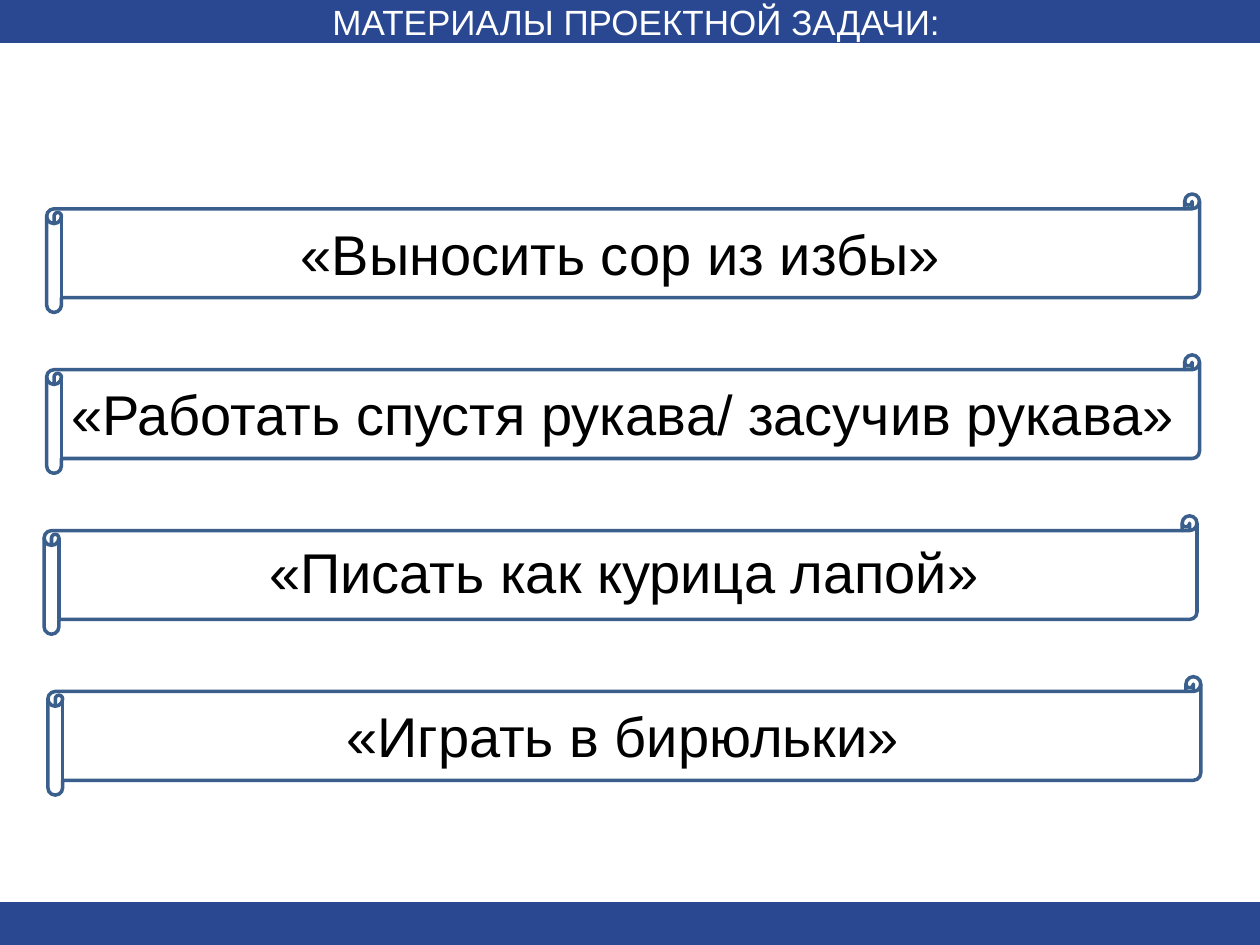
from pptx import Presentation
from pptx.dml.color import RGBColor
from pptx.enum.shapes import MSO_SHAPE as SHAPE
from pptx.enum.text import MSO_ANCHOR as ANCHOR, PP_ALIGN as ALIGN
from pptx.util import Inches, Pt

BAND = "294891"
OUTLINE = "3A5F8C"
IDIOMS = [
    ("«Выносить сор из избы»", 0.37, (0.94, 1.69, 7.97, 0.64)),
    ("«Работать спустя рукава/ засучив рукава»", 0.37, (0.38, 2.96, 9.13, 0.64)),
    ("«Писать как курица лапой»", 0.35, (0.97, 4.22, 7.97, 0.64)),
    ("«Играть в бирюльки»", 0.38, (0.96, 5.52, 7.97, 0.64)),
]
SCROLL_TOP, SCROLL_STEP = 1.54, 1.277


def rgb(value):
    """Turn a hex string into a colour."""
    return RGBColor.from_string(value)


def add_band(slide, top):
    """Add a full-width coloured band."""
    sp = slide.shapes.add_shape(SHAPE.RECTANGLE, 0, Inches(top), Inches(10), Inches(0.35))
    sp.shadow.inherit = False
    sp.fill.solid()
    sp.fill.fore_color.rgb = rgb(BAND)
    sp.line.fill.background()


def add_scroll(slide, left, top):
    """Add an unfilled, outlined horizontal scroll."""
    box = map(Inches, (left, top, 9.15, 0.94))
    sp = slide.shapes.add_shape(SHAPE.HORIZONTAL_SCROLL, *box)
    sp.shadow.inherit = False
    sp.fill.background()
    sp.line.color.rgb = rgb(OUTLINE)
    sp.line.width = Pt(2)


def add_text(slide, text, box, size, color, anchor=ANCHOR.TOP):
    """Add a centred line of text."""
    tf = slide.shapes.add_textbox(*map(Inches, box)).text_frame
    tf.word_wrap = True
    tf.vertical_anchor = anchor
    p = tf.paragraphs[0]
    p.alignment = ALIGN.CENTER
    r = p.add_run()
    r.text = text
    for name, value in {"name": "Arial", "size": Pt(size)}.items():
        setattr(r.font, name, value)
    r.font.color.rgb = rgb(color)


def main():
    """Build and save the slide."""
    prs = Presentation()
    prs.slide_width, prs.slide_height = Inches(10), Inches(7.5)
    s = prs.slides.add_slide(prs.slide_layouts[6])
    for top in (-0.01, 7.16):
        add_band(s, top)
    for i, (_, left, _) in enumerate(IDIOMS):
        add_scroll(s, left, SCROLL_TOP + i * SCROLL_STEP)
    for text, _, box in IDIOMS:
        add_text(s, text, box, 32, "000000")
    add_text(s, "МАТЕРИАЛЫ ПРОЕКТНОЙ ЗАДАЧИ:", (0.05, -0.19, 10, 0.58), 20, "FFFFFF", ANCHOR.BOTTOM)
    prs.save("out.pptx")


if __name__ == "__main__":
    main()
